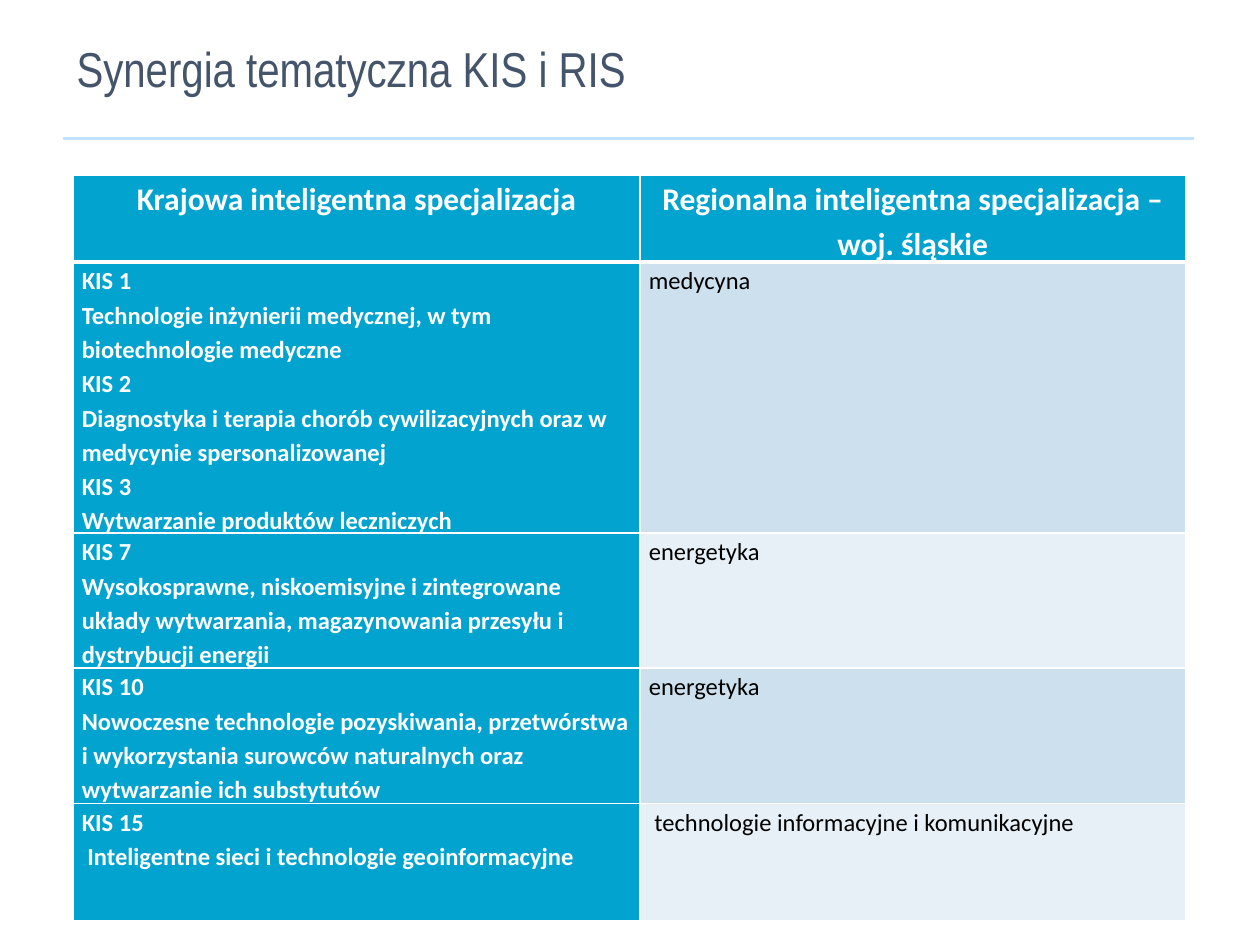
from dataclasses import dataclass

from lxml.etree import SubElement
from pptx import Presentation
from pptx.dml.color import RGBColor
from pptx.enum.shapes import MSO_CONNECTOR as Connector
from pptx.enum.text import MSO_ANCHOR as Anchor, PP_ALIGN as Align
from pptx.oxml.ns import qn
from pptx.slide import Slide
from pptx.table import _Cell as Cell
from pptx.util import Inches, Pt

COLORS = {
    "white": "FFFFFF",
    "black": "000000",
    "title": "44546A",
    "rule": "C1E3FF",
    "accent": "03A3CF",
    "band_dark": "CCE0ED",
    "band_light": "E7F0F6",
}
COLUMN_WIDTHS = (4.5, 4.33)
HEADER_HEIGHT = 0.69
HEADINGS = (
    "Krajowa inteligentna specjalizacja",
    "Regionalna inteligentna specjalizacja – woj. śląskie",
)


@dataclass(frozen=True)
class Synergy:
    national: tuple[str, ...]
    regional: str
    height: float
    space_after: float = 0


@dataclass(frozen=True)
class CellStyle:
    fill: str
    color: str
    size: float = 14
    bold: bool = True
    align: Align = Align.LEFT
    top: float = 1
    bottom: float = 1
    space_after: float = 0


SYNERGIES = (
    Synergy(
        (
            "KIS 1",
            "Technologie inżynierii medycznej, w tym biotechnologie medyczne",
            "KIS 2",
            "Diagnostyka i terapia chorób cywilizacyjnych oraz w medycynie spersonalizowanej",
            "KIS 3",
            "Wytwarzanie produktów leczniczych",
        ),
        "medycyna",
        2.15,
    ),
    Synergy(
        (
            "KIS 7",
            "Wysokosprawne, niskoemisyjne i zintegrowane układy wytwarzania, "
            "magazynowania przesyłu i dystrybucji energii",
        ),
        "energetyka",
        1.07,
    ),
    Synergy(
        (
            "KIS 10",
            "Nowoczesne technologie pozyskiwania, przetwórstwa i wykorzystania "
            "surowców naturalnych oraz wytwarzanie ich substytutów",
        ),
        "energetyka",
        1.07,
    ),
    Synergy(
        ("KIS 15", " Inteligentne sieci i technologie geoinformacyjne"),
        " technologie informacyjne i komunikacyjne",
        0.93,
        space_after=10,
    ),
)


def rgb(name: str) -> RGBColor:
    return RGBColor.from_string(COLORS[name])


def add_title(slide: Slide, text: str) -> None:
    title = slide.shapes.add_textbox(Inches(0.51), Inches(0), Inches(8.97), Inches(1.13))
    frame = title.text_frame
    frame.word_wrap = True
    frame.vertical_anchor = Anchor.MIDDLE
    heading = frame.paragraphs[0]
    heading.text = text
    heading.line_spacing = 0.9
    heading.font.name = "Arial Narrow"
    heading.font.size = Pt(28)
    heading.font.color.rgb = rgb("title")


def add_rule(slide: Slide) -> None:
    rule = slide.shapes.add_connector(
        Connector.STRAIGHT, Inches(0.5), Inches(1.1), Inches(9.48), Inches(1.1)
    )
    rule.line.color.rgb = rgb("rule")
    rule.line.width = Pt(1.75)
    SubElement(rule._element.spPr, qn("a:effectLst"))


def set_borders(cell: Cell, top: float, bottom: float) -> None:
    properties = cell._tc.get_or_add_tcPr()
    for side, width in (("L", 1), ("R", 1), ("T", top), ("B", bottom)):
        border = SubElement(properties, qn(f"a:ln{side}"), w=str(Pt(width)))
        fill = SubElement(border, qn("a:solidFill"))
        SubElement(fill, qn("a:srgbClr"), val=COLORS["white"])


def fill_cell(cell: Cell, lines: tuple[str, ...], style: CellStyle) -> None:
    set_borders(cell, style.top, style.bottom)
    cell.fill.solid()
    cell.fill.fore_color.rgb = rgb(style.fill)
    cell.margin_left = cell.margin_right = Inches(0.07)
    cell.margin_top = cell.margin_bottom = Inches(0)
    cell.text = "\n".join(lines)
    for paragraph in cell.text_frame.paragraphs:
        paragraph.alignment = style.align
        paragraph.line_spacing = 1.15
        paragraph.space_after = Pt(style.space_after)
        paragraph.font.name = "Calibri"
        paragraph.font.size = Pt(style.size)
        paragraph.font.bold = style.bold
        paragraph.font.color.rgb = rgb(style.color)


def add_synergy_table(slide: Slide) -> None:
    heights = (HEADER_HEIGHT, *(synergy.height for synergy in SYNERGIES))
    table = slide.shapes.add_table(
        len(heights), len(COLUMN_WIDTHS), Inches(0.58), Inches(1.39),
        Inches(sum(COLUMN_WIDTHS)), Inches(sum(heights)),
    ).table
    for column, width in zip(table.columns, COLUMN_WIDTHS):
        column.width = Inches(width)
    for row, height in zip(table.rows, heights):
        row.height = Inches(height)

    header = CellStyle("accent", "white", size=18, align=Align.CENTER, bottom=3)
    for column, heading in enumerate(HEADINGS):
        fill_cell(table.cell(0, column), (heading,), header)

    for row, synergy in enumerate(SYNERGIES, start=1):
        top = 3 if row == 1 else 1
        band = "band_dark" if row % 2 else "band_light"
        national = CellStyle("accent", "white", top=top)
        regional = CellStyle(
            band, "black", bold=False, top=top, space_after=synergy.space_after
        )
        fill_cell(table.cell(row, 0), synergy.national, national)
        fill_cell(table.cell(row, 1), (synergy.regional,), regional)


def main() -> None:
    presentation = Presentation()
    presentation.slide_width = Inches(10)
    presentation.slide_height = Inches(7.5)
    slide = presentation.slides.add_slide(presentation.slide_layouts[6])
    add_rule(slide)
    add_title(slide, "Synergia tematyczna KIS i RIS")
    add_synergy_table(slide)
    presentation.save("out.pptx")


if __name__ == "__main__":
    main()
